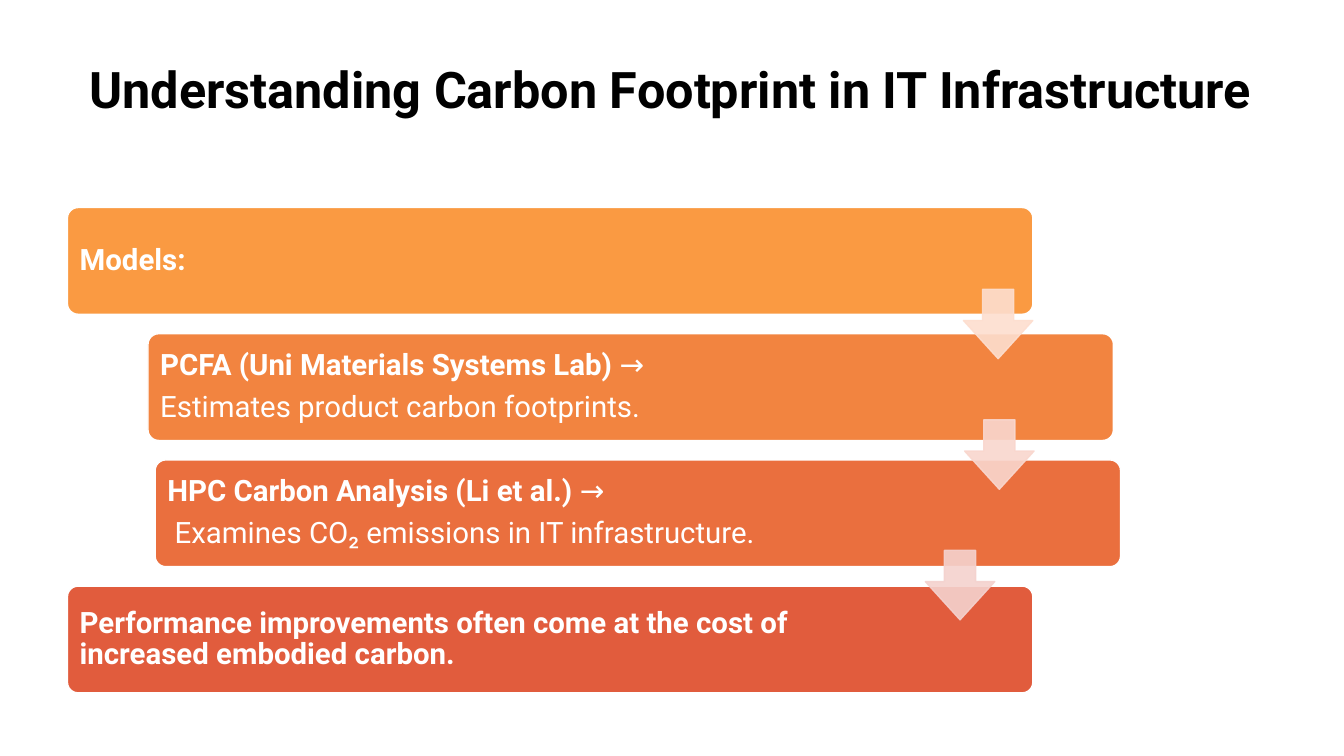
from dataclasses import dataclass

import pptx
import pptx.dml.color
import pptx.enum.shapes
import pptx.enum.text
import pptx.oxml
import pptx.oxml.ns
import pptx.util

Cm = pptx.util.Cm
Pt = pptx.util.Pt
SHAPE = pptx.enum.shapes.MSO_SHAPE
ALIGN = pptx.enum.text.PP_ALIGN
ANCHOR = pptx.enum.text.MSO_ANCHOR


@dataclass(frozen=True)
class Theme:
    """Colours and type sizes of the slide."""
    font: str = "Roboto"
    title_size: int = 36
    body_size: int = 21
    dark: str = "000000"
    light: str = "FFFFFF"
    steps: tuple = ("FA9A42", "F28440", "EA6F3E", "E15C3D")
    arrows: tuple = ("FDDECF", "F9D7CE", "F4D2CE")


def rgb(value):
    """Turn a hex string into a colour."""
    return pptx.dml.color.RGBColor.from_string(value)


def write(tf, paragraphs, *, font, size, color, align=ALIGN.LEFT, gap=0):
    """Fill a text frame with paragraphs of (text, bold) runs."""
    tf.word_wrap = True
    for i, runs in enumerate(paragraphs):
        p = tf.paragraphs[0] if i == 0 else tf.add_paragraph()
        p.alignment = align
        p.line_spacing = 0.9
        p.space_before = Pt(gap if i else 0)
        for text, bold in runs:
            r = p.add_run()
            r.text = text
            r.font.name = font
            r.font.size = Pt(size)
            r.font.bold = bold
            r.font.color.rgb = rgb(color)


class Deck:
    """Holds the theme and the current slide."""

    def __init__(self, prs, theme):
        """Add a blank slide to the presentation."""
        self.theme = theme
        self.s = prs.slides.add_slide(prs.slide_layouts[6])

    def shape(self, kind, left, top, width, height, *, fill, line, adj):
        """Add a flat preset shape with a thin outline."""
        sp = self.s.shapes.add_shape(kind, Cm(left), Cm(top), Cm(width), Cm(height))
        sp.shadow.inherit = False
        for i, value in enumerate(adj):
            sp.adjustments[i] = value
        sp.fill.solid()
        sp.fill.fore_color.rgb = rgb(fill)
        sp.line.color.rgb = rgb(line)
        sp.line.width = Pt(1)
        return sp

    def title(self, text):
        """Add the centred heading."""
        t = self.theme
        sp = self.s.shapes.add_textbox(Cm(1.7), Cm(1.52), Cm(30.4), Cm(3.15))
        write(sp.text_frame, [[(text, True)]], font=t.font, size=t.title_size,
              color=t.dark, align=ALIGN.CENTER)

    def step(self, left, top, fill, paragraphs):
        """Add a rounded bar with its text."""
        t = self.theme
        sp = self.shape(SHAPE.ROUNDED_RECTANGLE, left, top, 24.33, 2.69,
                        fill=fill, line=t.light, adj=[0.1])
        tf = sp.text_frame
        tf.vertical_anchor = ANCHOR.MIDDLE
        tf.margin_left = tf.margin_top = tf.margin_bottom = Cm(0.23)
        tf.margin_right = Cm(4)
        write(tf, paragraphs, font=t.font, size=t.body_size, color=t.light, gap=7.5)

    def arrow(self, left, top, color):
        """Add a translucent arrow pointing down."""
        sp = self.shape(SHAPE.DOWN_ARROW, left, top, 1.75, 1.75,
                        fill=color, line=color, adj=[0.45, 0.55])
        for clr in sp._element.spPr.iter(pptx.oxml.ns.qn("a:srgbClr")):
            alpha = pptx.oxml.parse_xml(
                f'<a:alpha {pptx.oxml.ns.nsdecls("a")} val="90000"/>')
            clr.append(alpha)


STEPS = [
    (1.7, [[("Models:", True)]]),
    (3.73, [[("PCFA (Uni Materials Systems Lab)", True), (" →", False)],
            [("Estimates product carbon footprints.", False)]]),
    (3.91, [[("HPC Carbon Analysis (Li et al.)", True), (" →", False)],
            [(" Examines CO₂ emissions in IT infrastructure.", False)]]),
    (1.7, [[("Performance improvements often come at the cost of "
             "increased embodied carbon.", True)]]),
]
ARROW_LEFTS = [24.28, 24.31, 23.32]


def main():
    """Build and save the slide."""
    prs = pptx.Presentation()
    prs.slide_width, prs.slide_height = Cm(33.87), Cm(19.05)
    theme = Theme()
    deck = Deck(prs, theme)
    deck.title("Understanding Carbon Footprint in IT Infrastructure")
    for i, (left, paragraphs) in enumerate(STEPS):
        deck.step(left, 5.23 + 3.18 * i, theme.steps[i], paragraphs)
    for i, left in enumerate(ARROW_LEFTS):
        deck.arrow(left, 7.29 + 3.29 * i, theme.arrows[i])
    prs.save("out.pptx")


if __name__ == "__main__":
    main()
